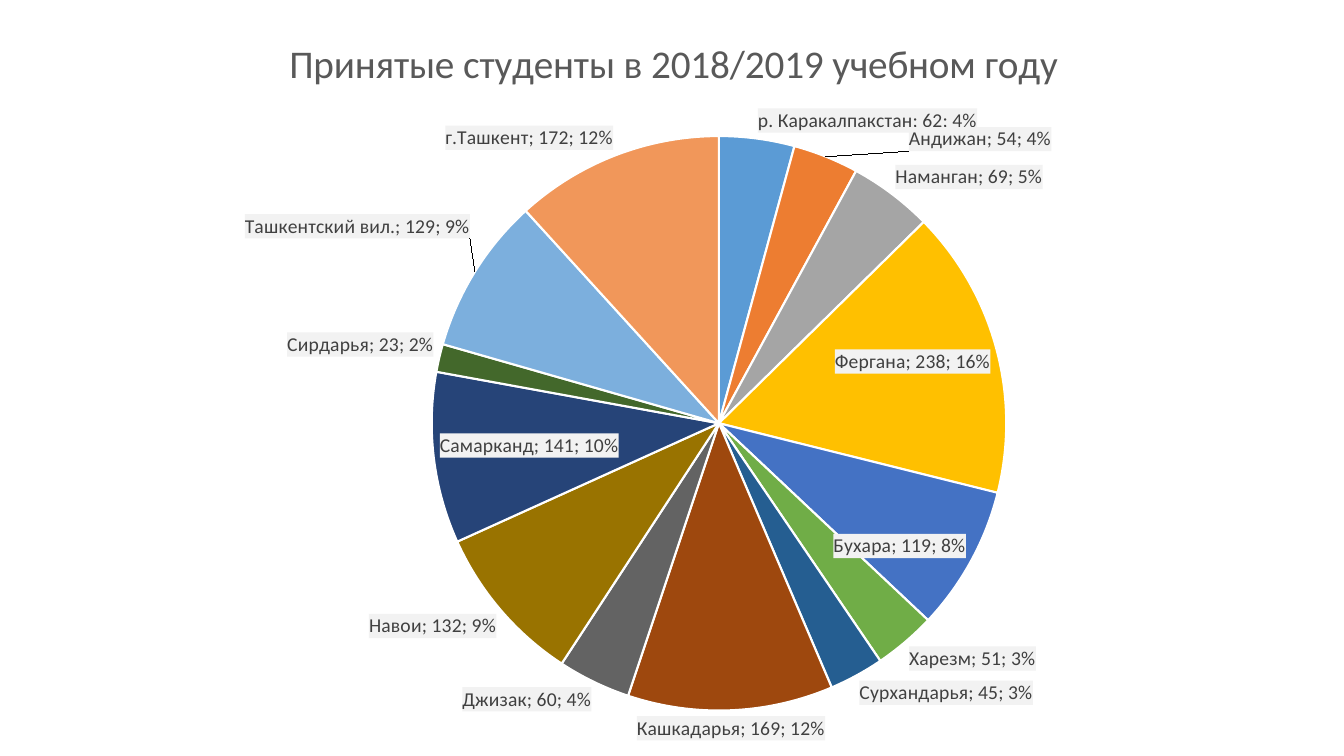
from lxml import etree
from pptx import Presentation
from pptx.chart.data import CategoryChartData
from pptx.dml.color import RGBColor
from pptx.enum.chart import XL_CHART_TYPE
from pptx.oxml import parse_xml
from pptx.oxml.ns import nsdecls, qn
from pptx.util import Pt

PIE = XL_CHART_TYPE.PIE
FONT = "Calibri"
SLIDE_WIDTH, SLIDE_HEIGHT = Pt(960), Pt(540)
TITLE = "Принятые студенты в 2018/2019 учебном году"
COLORS = {"title": "595959", "label": "404040", "label_fill": "F2F2F2",
          "border": "FFFFFF", "text": "000000"}
# region, students, slice colour
REGIONS = [
    ("р. Каракалпакстан", 62, "5B9BD5"),
    ("Андижан", 54, "ED7D31"),
    ("Наманган", 69, "A5A5A5"),
    ("Фергана", 238, "FFC000"),
    ("Бухара", 119, "4472C4"),
    ("Харезм", 51, "70AD47"),
    ("Сурхандарья", 45, "255E91"),
    ("Кашкадарья", 169, "9E480E"),
    ("Джизак", 60, "636363"),
    ("Навои", 132, "997300"),
    ("Самарканд", 141, "264478"),
    ("Сирдарья", 23, "43682B"),
    ("Ташкентский вил.", 129, "7CAFDD"),
    ("г.Ташкент", 172, "F1975A"),
]
INSIDE_LABELS = {"Фергана", "Бухара", "Самарканд"}
# label shifts as fractions of the chart size
LABEL_SHIFTS = {"Андижан": (0.06, 0), "Ташкентский вил.": (0, -0.04)}


def format_font(font, size, color):
    for name, value in {"name": FONT, "size": Pt(size), "bold": False}.items():
        setattr(font, name, value)
    font.color.rgb = RGBColor.from_string(COLORS[color])


def layout_xml(**values):
    """Manual layout element; keyword order must follow the chart schema."""
    entries = "".join(f'<c:{name} val="{value}"/>' for name, value in values.items())
    return f"<c:layout><c:manualLayout>{entries}</c:manualLayout></c:layout>"


def place(element, **values):
    """Give a title or plot area a manual layout."""
    for old_layout in element.findall(qn("c:layout")):
        element.remove(old_layout)
    wrapper = parse_xml(f'<c:title {nsdecls("c")}>{layout_xml(**values)}</c:title>')
    text = element.find(qn("c:tx"))
    element.insert(0 if text is None else 1, wrapper[0])


def label_format_xml(position):
    return f"""
    <c:spPr><a:solidFill><a:srgbClr val="{COLORS['label_fill']}"/></a:solidFill>
      <a:ln><a:noFill/></a:ln></c:spPr>
    <c:txPr><a:bodyPr wrap="none"/><a:p><a:pPr><a:defRPr sz="1400" b="0">
      <a:solidFill><a:srgbClr val="{COLORS['label']}"/></a:solidFill>
      <a:latin typeface="{FONT}"/></a:defRPr></a:pPr></a:p></c:txPr>
    <c:dLblPos val="{position}"/><c:showLegendKey val="0"/><c:showVal val="1"/>
    <c:showCatName val="1"/><c:showSerName val="0"/><c:showPercent val="1"/>
    <c:showBubbleSize val="0"/><c:separator>; </c:separator>"""


def add_labels(series):
    """Label each slice with region, value and percent."""
    special = ""
    for index, (region, _, _) in enumerate(REGIONS):
        if region in INSIDE_LABELS or region in LABEL_SHIFTS:
            shift = LABEL_SHIFTS.get(region)
            layout = layout_xml(x=shift[0], y=shift[1]) if shift else ""
            position = "inEnd" if region in INSIDE_LABELS else "outEnd"
            special += (f'<c:dLbl><c:idx val="{index}"/>{layout}'
                        f"{label_format_xml(position)}</c:dLbl>")
    labels = parse_xml(f'<c:dLbls {nsdecls("c", "a")}>{special}'
                       f'{label_format_xml("outEnd")}</c:dLbls>')
    etree.SubElement(labels, qn("c:showLeaderLines")).set("val", "1")
    series._element.find(qn("c:cat")).addprevious(labels)


def color_slices(series):
    for index, (_, _, color) in enumerate(REGIONS):
        slice_format = series.points[index].format
        slice_format.fill.solid()
        slice_format.fill.fore_color.rgb = RGBColor.from_string(color)
        slice_format.line.width = Pt(1.5)
        slice_format.line.color.rgb = RGBColor.from_string(COLORS["border"])


def add_title(chart):
    text_frame = chart.chart_title.text_frame
    text_frame.text = TITLE
    format_font(text_frame.paragraphs[0].runs[0].font, 28, "title")
    place(chart.chart_title._element, xMode="edge", yMode="edge", x=0.21, y=0.04)


def add_pie(slide):
    data = CategoryChartData()
    data.categories = [region for region, _, _ in REGIONS]
    data.add_series(TITLE, [students for _, students, _ in REGIONS])
    chart = slide.shapes.add_chart(PIE, 0, 0, SLIDE_WIDTH, SLIDE_HEIGHT, data).chart
    chart.has_legend = False
    format_font(chart.font, 10, "text")
    add_title(chart)
    plot = chart.plots[0]
    plot.vary_by_categories = True
    color_slices(plot.series[0])
    add_labels(plot.series[0])
    place(plot._element.getparent(), layoutTarget="inner", xMode="edge",
          yMode="edge", x=0.32, y=0.18, w=0.43, h=0.76)


def main():
    presentation = Presentation()
    presentation.slide_width = SLIDE_WIDTH
    presentation.slide_height = SLIDE_HEIGHT
    slide = presentation.slides.add_slide(presentation.slide_layouts[6])
    add_pie(slide)
    presentation.save("out.pptx")


if __name__ == "__main__":
    main()
